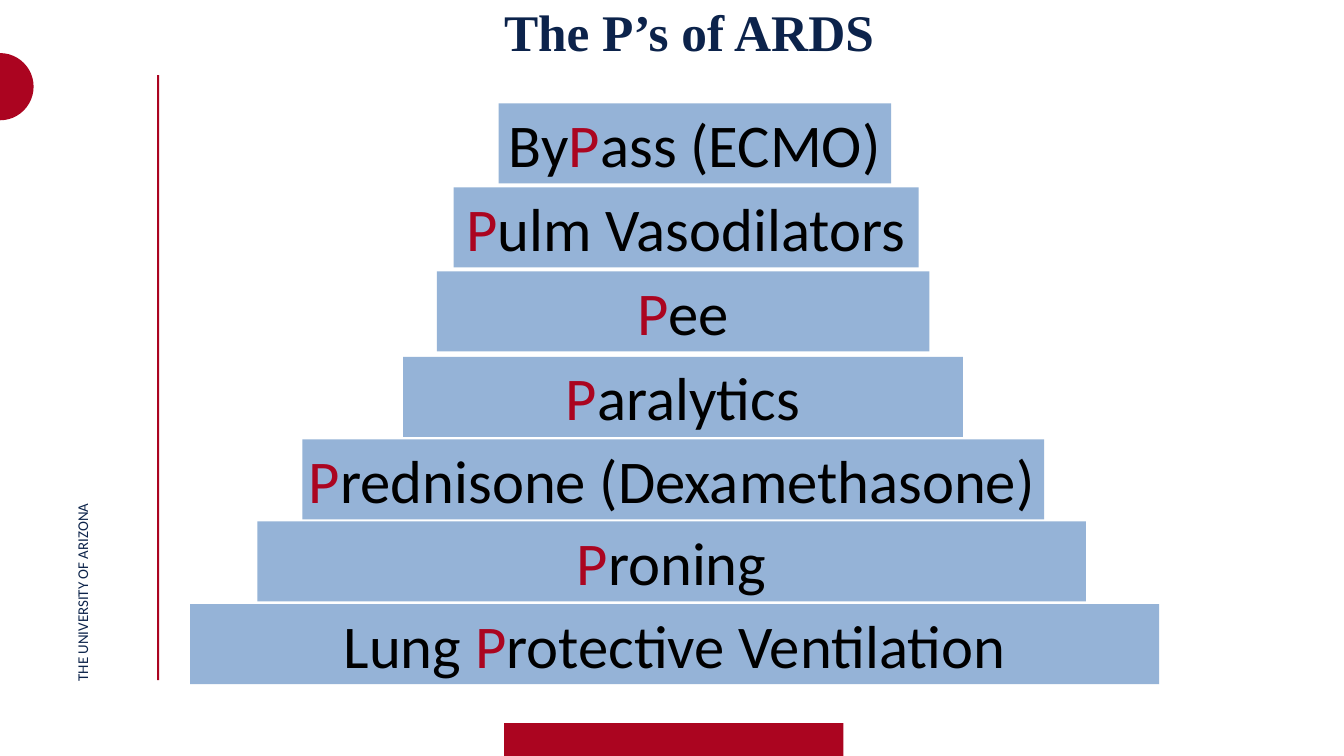
"""Build the slide on the P's of ARDS: a stepped pyramid of treatments."""
from pptx import Presentation
from pptx.dml.color import RGBColor
from pptx.enum.shapes import MSO_SHAPE
from pptx.enum.text import MSO_ANCHOR, MSO_AUTO_SIZE, PP_ALIGN
from pptx.util import Inches, Pt

THEME = {
    "circle": RGBColor.from_string("AB0420"),
    "red": RGBColor.from_string("AB0520"),
    "step": RGBColor.from_string("95B3D7"),
    "text": RGBColor.from_string("000000"),
    "title": {"name": "Times New Roman", "size": Pt(55), "bold": True},
    "title_color": RGBColor.from_string("0C234B"),
    "side": {"name": "Calibri", "size": Pt(16)},
    "side_color": RGBColor.from_string("0C234A"),
    "label": {"name": "Calibri", "size": Pt(65)},
}
FRAME = {
    "margin_left": 0, "margin_right": 0, "margin_bottom": 0,
    "margin_top": Inches(0.01), "word_wrap": True,
    "auto_size": MSO_AUTO_SIZE.NONE, "vertical_anchor": MSO_ANCHOR.TOP,
}
STEP_FRAME = {"word_wrap": True, "vertical_anchor": MSO_ANCHOR.TOP}


def add_block(slide, kind, box, color):
    shape = slide.shapes.add_shape(kind, *map(Inches, box))
    shape.shadow.inherit = False
    shape.fill.solid()
    shape.fill.fore_color.rgb = color
    shape.line.fill.background()
    return shape


def add_run(paragraph, text, font, color):
    run = paragraph.add_run()
    run.text = text
    for name, value in font.items():
        setattr(run.font, name, value)
    run.font.color.rgb = color


presentation = Presentation()
presentation.slide_width = Inches(20)
presentation.slide_height = Inches(11.25)
slide = presentation.slides.add_slide(presentation.slide_layouts[5])

decorations = [
    (MSO_SHAPE.OVAL, (-0.5, 0.79, 1, 1), THEME["circle"]),
    (MSO_SHAPE.RECTANGLE, (2.34, 1.12, 0.03, 9), THEME["circle"]),
    (MSO_SHAPE.RECTANGLE, (7.5, 10.76, 5.05, 0.54), THEME["red"]),
]
for kind, box, color in decorations:
    add_block(slide, kind, box, color)

title = slide.shapes.title
title.left, title.top, title.width, title.height = map(Inches, (7.5, 0, 11.22, 1.67))
side_label = slide.shapes.add_textbox(*map(Inches, (1.09, 3.88, 0.27, 6.26)))
side_label.element.txBody.bodyPr.set("vert", "vert270")

captions = [
    (title, "The P’s of ARDS", THEME["title"], THEME["title_color"]),
    (side_label, "THE UNIVERSITY OF ARIZONA", THEME["side"], THEME["side_color"]),
]
for shape, text, font, color in captions:
    for name, value in FRAME.items():
        setattr(shape.text_frame, name, value)
    paragraph = shape.text_frame.paragraphs[0]
    paragraph.alignment = PP_ALIGN.LEFT
    add_run(paragraph, text, font, color)

steps = [
    (2.83, 8.99, 14.42, "Lung ", "rotective Ventilation", PP_ALIGN.CENTER),
    (3.83, 7.76, 12.33, "", "roning", PP_ALIGN.CENTER),
    (4.5, 6.54, 11.04, "", "rednisone (Dexamethasone)", PP_ALIGN.LEFT),
    (6, 5.31, 8.33, "", "aralytics", PP_ALIGN.CENTER),
    (6.5, 4.04, 7.33, "", "ee", PP_ALIGN.CENTER),
    (6.75, 2.79, 6.92, "", "ulm Vasodilators", PP_ALIGN.CENTER),
    (7.42, 1.54, 5.84, "By", "ass (ECMO)", PP_ALIGN.CENTER),
]
for left, top, width, before, after, alignment in steps:
    step = add_block(slide, MSO_SHAPE.RECTANGLE, (left, top, width, 1.19), THEME["step"])
    for name, value in STEP_FRAME.items():
        setattr(step.text_frame, name, value)
    paragraph = step.text_frame.paragraphs[0]
    paragraph.alignment = alignment
    for text, color in ((before, THEME["text"]), ("P", THEME["red"]), (after, THEME["text"])):
        if text:
            add_run(paragraph, text, THEME["label"], color)

presentation.save("out.pptx")
